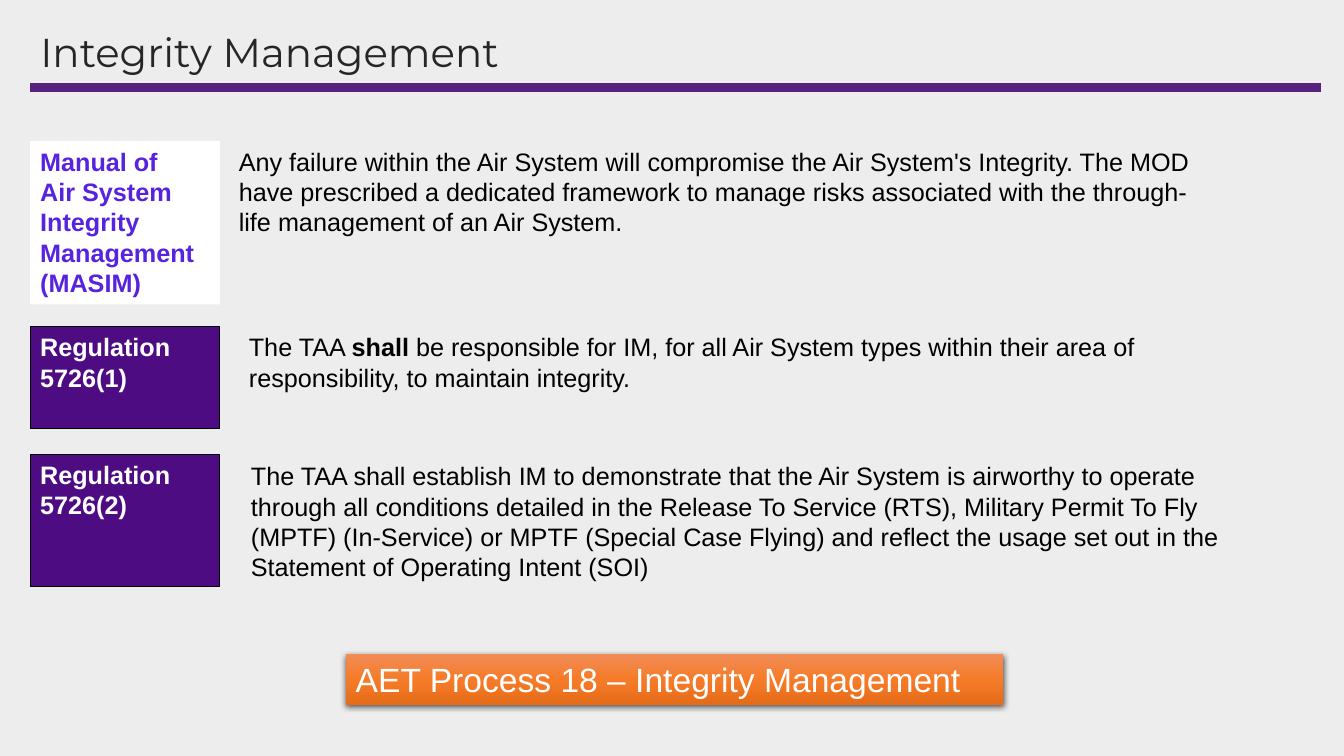
from copy import deepcopy
from dataclasses import dataclass

from lxml import etree
from pptx import Presentation
from pptx.dml.color import RGBColor
from pptx.enum.shapes import MSO_CONNECTOR, MSO_SHAPE
from pptx.enum.text import MSO_ANCHOR, MSO_AUTO_SIZE, PP_ALIGN
from pptx.oxml import parse_xml
from pptx.oxml.ns import nsdecls, qn
from pptx.util import Inches, Pt

TITLE = "Integrity Management"
BANNER = "AET Process 18 – Integrity Management"

# Each row: label, label style, label (top, height), spans of (text, bold), body (left, top, width, height)
ROWS = [
    (
        "Manual of\vAir System Integrity Management (MASIM)", "manual", (1.4, 1.62),
        [("Any failure within the Air System will compromise the Air System's Integrity. "
          "The MOD have prescribed a dedicated framework to manage risks associated with "
          "the through-life management of an Air System.", False)],
        (2.27, 1.4, 9.85, 1.01),
    ),
    (
        "Regulation 5726(1)", "regulation", (3.24, 1.01),
        [("The TAA ", False), ("shall", True),
         (" be responsible for IM, for all Air System types within their area of "
          "responsibility, to maintain integrity.", False)],
        (2.37, 3.24, 9.85, 0.71),
    ),
    (
        "Regulation 5726(2)", "regulation", (4.51, 1.31),
        [("The TAA shall establish IM to demonstrate that the Air System is airworthy to "
          "operate through all conditions detailed in the Release To Service (RTS), Military "
          "Permit To Fly (MPTF) (In-Service) or MPTF (Special Case Flying) and reflect the "
          "usage set out in the Statement of Operating Intent (SOI)", False)],
        (2.39, 4.52, 10.02, 1.32),
    ),
]

LEFT, CONTENT_WIDTH, LABEL_WIDTH = 0.3, 12.8, 1.88
RULE_TOP = 0.87
TITLE_PLACE = (LEFT, 0.28, CONTENT_WIDTH, 0.53)
BANNER_PLACE = (3.43, 6.49, 6.52, 0.5)


@dataclass(frozen=True)
class Theme:
    background: str = "EDEDED"
    rule: str = "56227D"
    title: str = "262626"
    text: str = "000000"
    white: str = "FFFFFF"
    manual: str = "5723DF"
    regulation: str = "4E0C82"
    outline: str = "000000"
    banner: tuple = ((0, "F18C57"), (0.5, "F67B28"), (1, "E56C19"))
    title_font: str = "Montserrat"
    body_font: str = "Arial"
    title_size: float = 28.8
    body_size: float = 18
    banner_size: float = 24


THEME = Theme()
LABEL_STYLES = {
    "manual": {"fill": THEME.white, "color": THEME.manual, "outline": None},
    "regulation": {"fill": THEME.regulation, "color": THEME.white, "outline": THEME.outline},
}


def rgb(value):
    return RGBColor.from_string(value)


def inches(place):
    return [Inches(length) for length in place]


def write(shape, spans, color, size=THEME.body_size, name=THEME.body_font):
    """Fill the shape with one left-aligned paragraph of (text, bold) spans."""
    frame = shape.text_frame
    settings = {"word_wrap": True, "auto_size": MSO_AUTO_SIZE.SHAPE_TO_FIT_TEXT,
                "vertical_anchor": MSO_ANCHOR.TOP}
    for key, value in settings.items():
        setattr(frame, key, value)
    para = frame.paragraphs[0]
    for text, _ in spans:
        para.add_run() if "\v" not in text else None
    if not para.runs:
        para.text = spans[0][0]
    else:
        for span, (text, _) in zip(para.runs, spans):
            span.text = text
    para.alignment = PP_ALIGN.LEFT
    bolds = [bold for _, bold in spans]
    for index, span in enumerate(para.runs):
        font = {"name": name, "size": Pt(size), "bold": bolds[min(index, len(bolds) - 1)]}
        for key, value in font.items():
            setattr(span.font, key, value)
        span.font.color.rgb = rgb(color)
    return para


def add_rectangle(page, place):
    box = page.shapes.add_shape(MSO_SHAPE.RECTANGLE, *inches(place))
    box.shadow.inherit = False
    box.line.fill.background()
    return box


def add_title(page):
    title = page.shapes.title
    title.left, title.top, title.width, title.height = inches(TITLE_PLACE)
    para = write(title, [(TITLE, False)], THEME.title, THEME.title_size, THEME.title_font)
    para.line_spacing = 0.9
    title.text_frame.auto_size = MSO_AUTO_SIZE.NONE
    title.text_frame.vertical_anchor = MSO_ANCHOR.MIDDLE


def add_rule(page):
    ends = inches((LEFT, RULE_TOP, LEFT + CONTENT_WIDTH, RULE_TOP))
    rule = page.shapes.add_connector(MSO_CONNECTOR.STRAIGHT, *ends)
    rule.line.color.rgb = rgb(THEME.rule)
    rule.line.width = Pt(6)
    etree.SubElement(rule._element.spPr, qn("a:effectLst"))


def add_row(page, label, style_name, label_span, spans, body_place):
    style = LABEL_STYLES[style_name]
    top, height = label_span
    box = add_rectangle(page, (LEFT, top, LABEL_WIDTH, height))
    box.fill.solid()
    box.fill.fore_color.rgb = rgb(style["fill"])
    if style["outline"]:
        box.line.color.rgb = rgb(style["outline"])
        box.line.width = Pt(0.75)
    write(box, [(label, True)], style["color"])
    write(page.shapes.add_textbox(*inches(body_place)), spans, THEME.text)


def add_banner(page):
    banner = add_rectangle(page, BANNER_PLACE)
    fill = banner.fill
    fill.gradient()
    fill.gradient_angle = 270
    stop_list = banner._element.spPr.find(".//" + qn("a:gsLst"))
    stop_list.append(deepcopy(stop_list[-1]))
    for stop, (position, color) in zip(fill.gradient_stops, THEME.banner):
        stop.position = position
        stop.color.rgb = rgb(color)
    banner._element.spPr.find(qn("a:effectLst")).append(parse_xml(
        f'<a:outerShdw {nsdecls("a")} blurRad="{Pt(4.5)}" dist="{Pt(1.5)}" dir="5400000" '
        f'algn="ctr" rotWithShape="0"><a:srgbClr val="{THEME.outline}">'
        '<a:alpha val="63000"/></a:srgbClr></a:outerShdw>'))
    write(banner, [(BANNER, False)], THEME.white, THEME.banner_size)


def main():
    deck = Presentation()
    deck.slide_width, deck.slide_height = inches((13.33, 7.5))
    page = deck.slides.add_slide(deck.slide_layouts[5])
    page.background.fill.solid()
    page.background.fill.fore_color.rgb = rgb(THEME.background)
    add_rule(page)
    add_title(page)
    for row in ROWS:
        add_row(page, *row)
    add_banner(page)
    deck.save("out.pptx")


if __name__ == "__main__":
    main()
